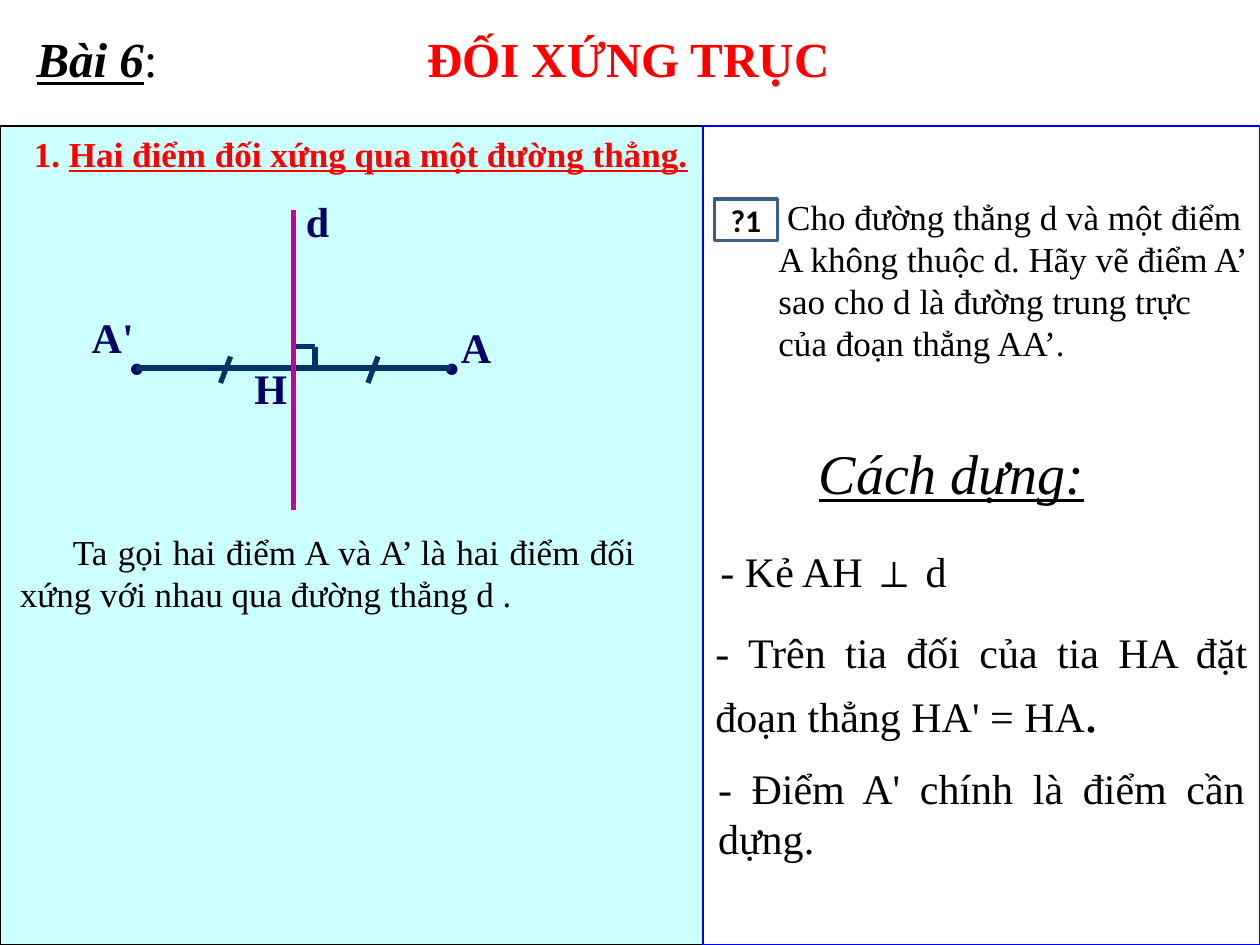
from dataclasses import dataclass
from typing import Optional

from lxml import etree
from pptx import Presentation
from pptx.dml.color import RGBColor
from pptx.enum.shapes import MSO_CONNECTOR, MSO_SHAPE
from pptx.enum.text import MSO_ANCHOR, MSO_AUTO_SIZE, PP_ALIGN
from pptx.oxml.ns import qn
from pptx.util import Inches, Pt

RECTANGLE = MSO_SHAPE.RECTANGLE
STRAIGHT = MSO_CONNECTOR.STRAIGHT
MIDDLE = MSO_ANCHOR.MIDDLE
FIT_SHAPE = MSO_AUTO_SIZE.SHAPE_TO_FIT_TEXT
LEFT, CENTER, JUSTIFY = PP_ALIGN.LEFT, PP_ALIGN.CENTER, PP_ALIGN.JUSTIFY


@dataclass(frozen=True)
class Theme:
    font: str = "Times New Roman"
    badge_font: str = "Calibri"
    black: str = "000000"
    white: str = "FFFFFF"
    red: str = "FF0000"
    blue: str = "0000FF"
    panel: str = "CCFFFF"
    label: str = "000066"
    segment: str = "003366"
    axis: str = "CC0099"
    badge_line: str = "3A5F8C"
    badge_size: int = 18
    body: int = 20
    step: int = 24
    heading: int = 28
    subtitle: int = 32
    dot: int = 40
    stroke: int = 3


THEME = Theme()


@dataclass(frozen=True)
class Run:
    text: str
    size: Optional[int] = None
    color: Optional[str] = None
    bold: Optional[bool] = None
    italic: Optional[bool] = None
    underline: Optional[bool] = None


@dataclass(frozen=True)
class TextBlock:
    left: float
    top: float
    width: float
    height: float
    runs: tuple[Run, ...]
    size: int = THEME.body
    color: str = THEME.black
    bold: bool = False
    align: PP_ALIGN = LEFT
    wrap: bool = True
    inset: float = 0.1
    indent: float = 0
    tab: float = 0


@dataclass(frozen=True)
class Line:
    x1: float
    y1: float
    x2: float
    y2: float
    color: str = THEME.segment


def add_text(slide, block: TextBlock) -> None:
    box = slide.shapes.add_textbox(Inches(block.left), Inches(block.top),
                                   Inches(block.width), Inches(block.height))
    frame = box.text_frame
    frame.word_wrap = block.wrap
    frame.auto_size = FIT_SHAPE
    frame.margin_left = Inches(block.inset)
    paragraph = frame.paragraphs[0]
    paragraph.alignment = block.align
    paragraph.font.name = THEME.font
    paragraph.font.size = Pt(block.size)
    paragraph.font.bold = block.bold
    paragraph.font.color.rgb = RGBColor.from_string(block.color)
    properties = paragraph._p.get_or_add_pPr()
    if block.indent:
        properties.set("marL", "0")
        properties.set("indent", str(Inches(block.indent)))
    if block.tab:
        tabs = etree.Element(qn("a:tabLst"))
        etree.SubElement(tabs, qn("a:tab"), pos=str(Inches(block.tab)), algn="l")
        properties.insert(0, tabs)
    for item in block.runs:
        run = paragraph.add_run()
        run.text = item.text
        run.font.bold = item.bold
        run.font.italic = item.italic
        run.font.underline = item.underline
        if item.size:
            run.font.size = Pt(item.size)
        if item.color:
            run.font.color.rgb = RGBColor.from_string(item.color)


def add_box(slide, left: float, top: float, width: float, height: float,
            fill: Optional[str], line: str, line_width: float):
    shape = slide.shapes.add_shape(RECTANGLE, Inches(left), Inches(top),
                                   Inches(width), Inches(height))
    shape.shadow.inherit = False
    if fill:
        shape.fill.solid()
        shape.fill.fore_color.rgb = RGBColor.from_string(fill)
    else:
        shape.fill.background()
    shape.line.color.rgb = RGBColor.from_string(line)
    shape.line.width = Pt(line_width)
    return shape


def add_badge(slide) -> None:
    badge = add_box(slide, 5.67, 1.58, 0.5, 0.33, None, THEME.badge_line, 2)
    frame = badge.text_frame
    frame.vertical_anchor = MIDDLE
    paragraph = frame.paragraphs[0]
    paragraph.text = "?1"
    paragraph.alignment = CENTER
    paragraph.font.name = THEME.badge_font
    paragraph.font.size = Pt(THEME.badge_size)
    paragraph.font.bold = True
    paragraph.font.color.rgb = RGBColor.from_string(THEME.black)


def add_line(slide, line: Line) -> None:
    connector = slide.shapes.add_connector(STRAIGHT, Inches(line.x1), Inches(line.y1),
                                           Inches(line.x2), Inches(line.y2))
    connector.line.color.rgb = RGBColor.from_string(line.color)
    connector.line.width = Pt(THEME.stroke)
    etree.SubElement(connector._element.spPr, qn("a:effectLst"))


def label(text: str, left: float, top: float, width: float, height: float = 0.5,
          size: int = THEME.step, wrap: bool = True) -> TextBlock:
    return TextBlock(left, top, width, height, (Run(text),), size,
                     THEME.label, bold=True, wrap=wrap)


# Title and left column
LESSON = (
    TextBlock(0, 0.18, 10, 0.57,
              (Run("Bài 6", bold=True, italic=True, underline=True), Run(":\t"),
               Run("ĐỐI XỨNG TRỤC", color=THEME.red, bold=True)),
              THEME.heading, inset=0.29, tab=3.1),
    TextBlock(0.17, 1, 5.58, 0.43,
              (Run("1. "), Run("Hai điểm đối xứng qua một đường thẳng.", underline=True)),
              color=THEME.red, bold=True),
    TextBlock(0.06, 4.16, 5.08, 0.77,
              (Run("Ta gọi hai điểm A và A’ là hai điểm đối xứng với nhau "
                   "qua đường thẳng d ."),),
              align=JUSTIFY, indent=0.42),
)

# Right column: question and construction steps
CONSTRUCTION = (
    TextBlock(6.08, 1.5, 3.92, 1.45,
              (Run(" Cho đường thẳng d và một điểm A không thuộc d. Hãy vẽ điểm A’ "
                   "sao cho d là đường trung trực của đoạn thẳng AA’."),)),
    TextBlock(6.4, 3.43, 2.83, 0.63,
              (Run("Cách dựng:", italic=True, underline=True),), THEME.subtitle),
    TextBlock(5.62, 4.28, 5.67, 0.5, (Run("- Kẻ AH ⊥ d"),), THEME.step),
    TextBlock(5.58, 4.92, 4.42, 1.04,
              (Run("- Trên tia đối của tia HA đặt đoạn thẳng HA' = HA"),
               Run(".", size=THEME.subtitle)), THEME.step, align=JUSTIFY),
    TextBlock(5.6, 6, 4.38, 0.91, (Run("- Điểm A' chính là điểm cần dựng."),),
              THEME.step, align=JUSTIFY),
)

# Figure: H is the foot of the perpendicular from A to d
FOOT_X, FOOT_Y, HALF = 2.33, 2.92, 1.25
CORNER = 0.17
FIGURE_LINES = (
    *(Line(FOOT_X + side * HALF, FOOT_Y, FOOT_X, FOOT_Y) for side in (1, -1)),
    Line(FOOT_X, FOOT_Y - CORNER, FOOT_X + CORNER, FOOT_Y - CORNER),
    Line(FOOT_X + CORNER, FOOT_Y - CORNER, FOOT_X + CORNER, FOOT_Y),
    *(Line(x, 2.83, x - 0.08, 3.04) for x in (3, 1.83)),
    Line(FOOT_X, 1.67, FOOT_X, 4.05, THEME.axis),
)
FIGURE_LABELS = (
    label("d", 2.33, 1.5, 0.33),
    label("H", 1.92, 2.83, 0.5),
    label("A", 3.56, 2.5, 0.44, wrap=False),
    label("A'", 0.63, 2.42, 0.53, wrap=False),
    *(label(".", left, 2.37, 0.42, 0.77, THEME.dot) for left in (3.42, 0.92)),
)


def main() -> None:
    presentation = Presentation()
    presentation.slide_width, presentation.slide_height = Inches(10), Inches(7.5)
    slide = presentation.slides.add_slide(presentation.slide_layouts[6])
    add_box(slide, 0, 1, 5.58, 6.5, THEME.panel, THEME.black, 0.75)
    add_box(slide, 5.58, 1, 4.42, 6.5, THEME.white, THEME.blue, 0.75)
    add_badge(slide)
    for block in LESSON + CONSTRUCTION + FIGURE_LABELS:
        add_text(slide, block)
    for line in FIGURE_LINES:
        add_line(slide, line)
    presentation.save("out.pptx")


if __name__ == "__main__":
    main()
